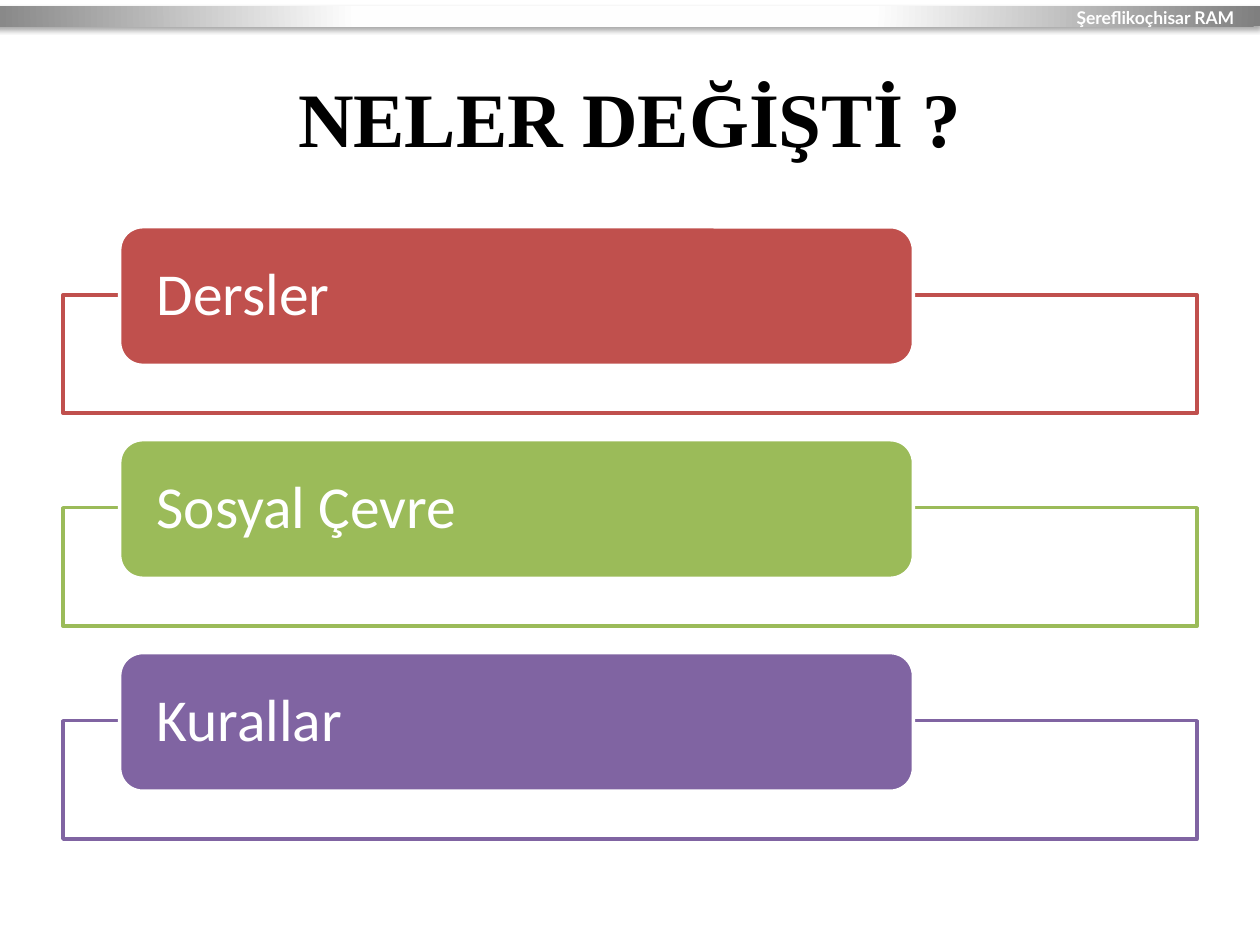
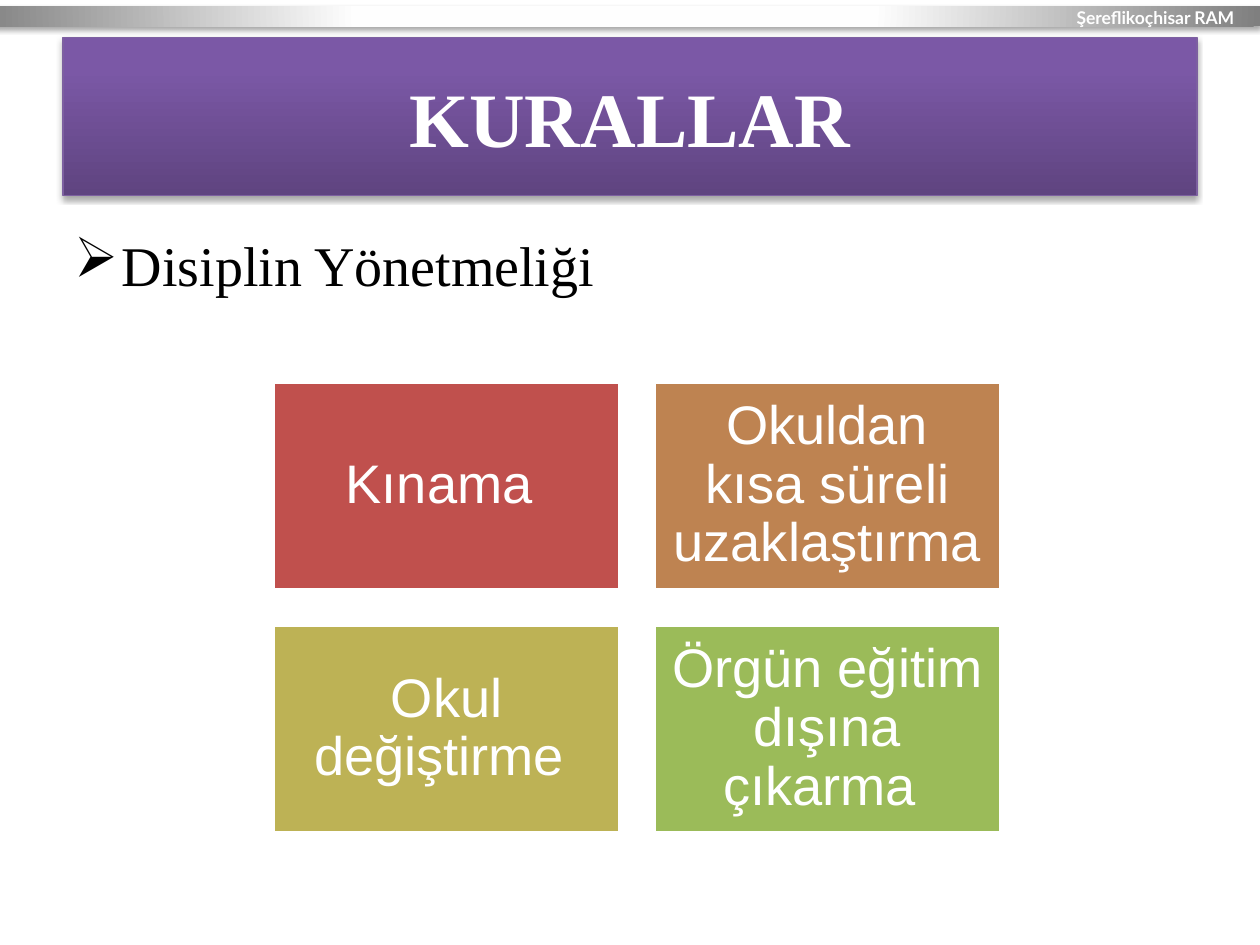
from lxml import etree
from pptx import Presentation
from pptx.dml.color import RGBColor
from pptx.enum.shapes import MSO_SHAPE as SHAPE
from pptx.enum.text import MSO_ANCHOR as ANCHOR, PP_ALIGN as ALIGN
from pptx.oxml import parse_xml
from pptx.oxml.ns import nsdecls, qn
from pptx.util import Inches, Pt

COLORS = {
    "white": "FFFFFF", "black": "000000",
    "red": "C0504D", "orange": "BE8351", "olive": "BDB255",
    "green": "9BBB59", "purple": "8064A2", "title_line": "7D60A0",
}
BAND_STOPS = [(0, "FFFFFF"), (40, "FEFEFE"), (100, "7F7F7F")]
BAND_PATH = '<a:path path="circle"><a:fillToRect l="50000" t="-80000" r="50000" b="180000"/></a:path>'
TITLE_STOPS = [(0, "5F4480"), (80, "7B58A6"), (100, "7C57A8")]
TITLE_DIRECTION = '<a:lin ang="16200000" scaled="0"/>'
TITLE_AREA = (0.5, 0.3, 9, 1.25)
TITLE_FORMAT = dict(size=44, font="Times New Roman", bold=True)


def add_box(slide, area, text="", shape_type=SHAPE.RECTANGLE, fill=None, line=None,
            line_width=2, size=18, font="Calibri", color="white", bold=False,
            align=ALIGN.CENTER, anchor=ANCHOR.MIDDLE, margins=(0.1, 0.05), line_spacing=1):
    """Add a shape, bare unless fill or line is named, holding one formatted paragraph."""
    shape = slide.shapes.add_shape(shape_type, *map(Inches, area))
    shape.shadow.inherit = False
    if fill:
        shape.fill.solid()
        shape.fill.fore_color.rgb = RGBColor.from_string(COLORS[fill])
    else:
        shape.fill.background()
    if line:
        shape.line.color.rgb = RGBColor.from_string(COLORS[line])
        shape.line.width = Pt(line_width)
    else:
        shape.line.fill.background()
    if text:
        frame = shape.text_frame
        frame.word_wrap = True
        frame.vertical_anchor = anchor
        frame.margin_left = frame.margin_right = Inches(margins[0])
        frame.margin_top = frame.margin_bottom = Inches(margins[1])
        paragraph = frame.paragraphs[0]
        paragraph.alignment = align
        paragraph.line_spacing = line_spacing
        run = paragraph.add_run()
        run.text = text
        run.font.size = Pt(size)
        run.font.name = font
        run.font.bold = bold
        run.font.color.rgb = RGBColor.from_string(COLORS[color])
    return shape


def add_gradient_and_shadow(shape, stops, direction):
    properties = shape.element.spPr
    stop_xml = "".join(
        f'<a:gs pos="{position * 1000}"><a:srgbClr val="{color}"/></a:gs>'
        for position, color in stops)
    gradient = parse_xml(
        f'<a:gradFill {nsdecls("a")} rotWithShape="1">'
        f'<a:gsLst>{stop_xml}</a:gsLst>{direction}</a:gradFill>')
    properties.replace(properties.find(qn("a:noFill")), gradient)
    properties.find(qn("a:effectLst")).append(parse_xml(
        f'<a:outerShdw {nsdecls("a")} blurRad="{Pt(3.1)}" dist="{Pt(1.8)}" dir="5400000" '
        f'rotWithShape="0"><a:srgbClr val="{COLORS["black"]}">'
        '<a:alpha val="35000"/></a:srgbClr></a:outerShdw>'))


presentation = Presentation()
presentation.slide_width = Inches(10)
presentation.slide_height = Inches(7.5)
blank_layout = presentation.slide_layouts[6]
changes_slide, rules_slide = [presentation.slides.add_slide(blank_layout) for _ in range(2)]

# Shared header band
for slide in (changes_slide, rules_slide):
    band = add_box(slide, (-0.24, 0.05, 10.24, 0.16))
    add_gradient_and_shadow(band, BAND_STOPS, BAND_PATH)
    add_box(slide, (8.34, 0.01, 1.66, 0.28), "Şereflikoçhisar RAM",
            size=10, font="Lato", bold=True, anchor=ANCHOR.TOP)

# Slide 1: what has changed
add_box(changes_slide, TITLE_AREA, "NELER DEĞİŞTİ ?", color="black", **TITLE_FORMAT)
topics = [("Dersler", "red"), ("Sosyal Çevre", "green"), ("Kurallar", "purple")]
for row, (topic, color) in enumerate(topics):
    top = 1.8 + row * 1.69
    add_box(changes_slide, (0.5, top + 0.54, 9, 0.94), fill="white", line=color)
    add_box(changes_slide, (0.95, top, 6.3, 1.1), topic, SHAPE.ROUNDED_RECTANGLE,
            fill=color, line="white", size=34, align=ALIGN.LEFT,
            margins=(0.24, 0), line_spacing=0.9)

# Slide 2: rules and penalties
title = add_box(rules_slide, TITLE_AREA, "KURALLAR", line="title_line", line_width=0.75,
                **TITLE_FORMAT)
add_gradient_and_shadow(title, TITLE_STOPS, TITLE_DIRECTION)

body = add_box(rules_slide, (0.49, 1.78, 9, 4.95), "Disiplin Yönetmeliği", size=32,
               font="Times New Roman", color="black", align=ALIGN.LEFT, anchor=ANCHOR.TOP)
bullet_paragraph = body.text_frame.paragraphs[0]
bullet_paragraph.space_before = Pt(4)
bullet_properties = bullet_paragraph._p.get_or_add_pPr()
bullet_properties.set("marL", str(Inches(0.38)))
bullet_properties.set("indent", str(-Inches(0.38)))
etree.SubElement(bullet_properties, qn("a:buChar")).set("char", "➢")

penalties = [
    ("Kınama ", "red"), ("Okuldan kısa süreli uzaklaştırma ", "orange"),
    ("Okul değiştirme ", "olive"), ("Örgün eğitim dışına çıkarma ", "green"),
]
for index, (penalty, color) in enumerate(penalties):
    row, column = divmod(index, 2)
    add_box(rules_slide, (2.17 + column * 3.02, 3.03 + row * 1.93, 2.75, 1.65), penalty,
            fill=color, line="white", size=31, font="Arial",
            margins=(0.13, 0.13), line_spacing=0.9)

presentation.save("out.pptx")
